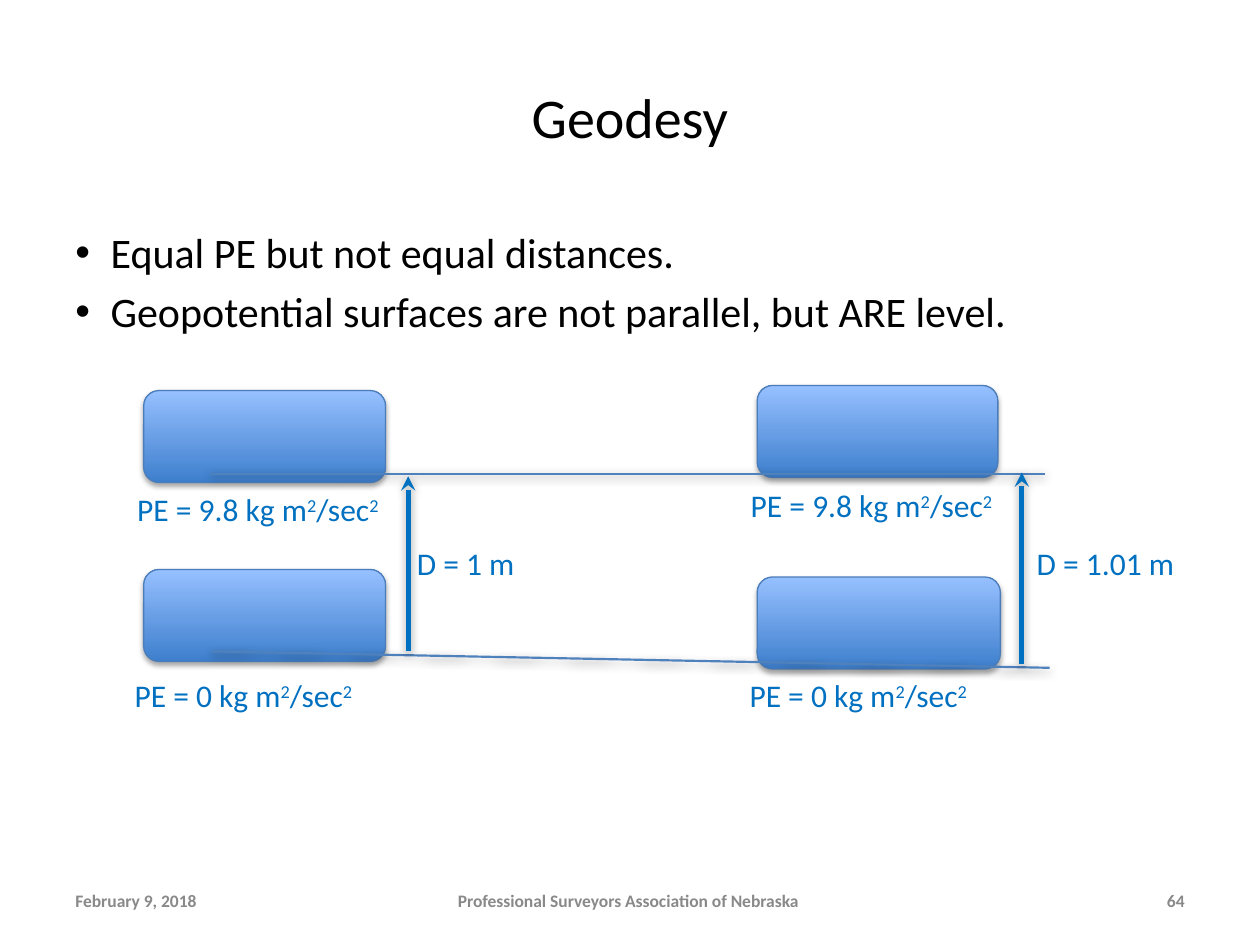
from typing import NamedTuple

from lxml import etree
from pptx import Presentation
from pptx.dml.color import RGBColor
from pptx.enum.shapes import MSO_CONNECTOR, MSO_SHAPE
from pptx.enum.text import MSO_ANCHOR, PP_ALIGN
from pptx.oxml.ns import qn
from pptx.util import Inches, Pt

LEFT, CENTER, RIGHT = PP_ALIGN.LEFT, PP_ALIGN.CENTER, PP_ALIGN.RIGHT
TOP, MIDDLE = MSO_ANCHOR.TOP, MSO_ANCHOR.MIDDLE
ROUNDED = MSO_SHAPE.ROUNDED_RECTANGLE
STRAIGHT = MSO_CONNECTOR.STRAIGHT
FONT = "Calibri"
COLORS = {
    "text": "000000",
    "footer": "898989",
    "label": "0070C0",
    "surface": "4F81BD",
    "block_edge": "4A7DBA",
    "block_bottom": "3E7FCD",
    "block_top": "96C0FF",
}


class Area(NamedTuple):
    left: float
    top: float
    width: float
    height: float


class Style(NamedTuple):
    size: float
    color: str
    bold: bool = False


class Footer(NamedTuple):
    text: str
    left: float
    width: float
    align: PP_ALIGN


class Label(NamedTuple):
    """Text in which each ^ puts the next character in superscript."""
    text: str
    left: float
    top: float
    width: float


class Line(NamedTuple):
    x1: float
    y1: float
    x2: float
    y2: float


TITLE_STYLE = Style(32, "text")
BODY_STYLE = Style(24, "text")
FOOTER_STYLE = Style(10, "footer", True)
LABEL_STYLE = Style(18, "label")

BULLETS = [
    "Equal PE but not equal distances.",
    "Geopotential surfaces are not parallel, but ARE level.",
]
FOOTERS = [
    Footer("February 9, 2018", 0.5, 2.33, LEFT),
    Footer("Professional Surveyors Association of Nebraska", 3.4, 3.17, CENTER),
    Footer("64", 7.17, 2.33, RIGHT),
]
BLOCKS = [
    Area(1.14, 4.52, 1.92, 0.73),
    Area(1.14, 3.1, 1.92, 0.73),
    Area(6.01, 4.58, 1.93, 0.73),
    Area(6.01, 3.06, 1.91, 0.73),
]
SURFACES = [Line(1.68, 5.17, 8.33, 5.3), Line(1.67, 3.76, 8.29, 3.76)]
HEIGHT_ARROWS = [Line(3.24, 5.17, 3.24, 3.78), Line(8.11, 5.27, 8.11, 3.75)]
UPPER_ENERGY = "PE = 9.8 kg m^2/sec^2"
LOWER_ENERGY = "PE = 0 kg m^2/sec^2"
LABELS = [
    Label(UPPER_ENERGY, 0.99, 3.84, 2.28),
    Label(UPPER_ENERGY, 5.86, 3.81, 2.28),
    Label(LOWER_ENERGY, 0.97, 5.32, 2.28),
    Label(LOWER_ENERGY, 5.85, 5.32, 2.28),
    Label("D = 1 m", 3.21, 4.27, 1.05),
    Label("D = 1.01 m", 8.13, 4.27, 1.37),
]


def rgb(name: str) -> RGBColor:
    return RGBColor.from_string(COLORS[name])


def add_span(para, text: str, style: Style, raised: bool = False) -> None:
    span = para.add_run()
    span.text = text
    span.font.name = FONT
    span.font.size = Pt(style.size)
    span.font.bold = style.bold
    span.font.color.rgb = rgb(style.color)
    if raised:
        span._r.get_or_add_rPr().set("baseline", "30000")


def add_text_box(slide, area: Area, anchor: MSO_ANCHOR = TOP):
    box = slide.shapes.add_textbox(*map(Inches, area))
    box.text_frame.word_wrap = True
    box.text_frame.vertical_anchor = anchor
    return box.text_frame


def add_shadow(shape, alpha: int, blur: float, distance: float) -> None:
    """Add a black shadow falling straight down; call after the line is set."""
    effects = etree.SubElement(shape._element.spPr, qn("a:effectLst"))
    shadow = etree.SubElement(
        effects, qn("a:outerShdw"), blurRad=str(Pt(blur)), dist=str(Pt(distance)),
        dir="5400000", rotWithShape="0")
    color = etree.SubElement(shadow, qn("a:srgbClr"), val="000000")
    etree.SubElement(color, qn("a:alpha"), val=str(alpha * 1000))


def add_title(slide, text: str) -> None:
    title = slide.shapes.title
    title.left, title.top, title.width, title.height = map(Inches, (0.5, 0.3, 9, 1.25))
    title.text_frame.vertical_anchor = MIDDLE
    para = title.text_frame.paragraphs[0]
    para.alignment = CENTER
    add_span(para, text, TITLE_STYLE)


def add_bullets(slide) -> None:
    frame = add_text_box(slide, Area(0.5, 1.75, 9, 0.78))
    for index, text in enumerate(BULLETS):
        para = frame.add_paragraph() if index else frame.paragraphs[0]
        if index:
            para.space_before = Pt(4.8)
        properties = para._p.get_or_add_pPr()
        properties.set("marL", str(Inches(0.28)))
        properties.set("indent", str(-Inches(0.28)))
        etree.SubElement(properties, qn("a:buFont"), typeface="Arial")
        etree.SubElement(properties, qn("a:buChar"), char="•")
        add_span(para, text, BODY_STYLE)


def add_footer(slide, footer: Footer) -> None:
    frame = add_text_box(slide, Area(footer.left, 6.95, footer.width, 0.4), MIDDLE)
    para = frame.paragraphs[0]
    para.alignment = footer.align
    add_span(para, footer.text, FOOTER_STYLE)


def add_block(slide, area: Area) -> None:
    block = slide.shapes.add_shape(ROUNDED, *map(Inches, area))
    block.adjustments[0] = 0.167
    block.fill.gradient()
    block.fill.gradient_angle = 90
    stops = zip(block.fill.gradient_stops, (0, 1), ("block_bottom", "block_top"))
    for stop, position, color in stops:
        stop.position = position
        stop.color.rgb = rgb(color)
    block.line.color.rgb = rgb("block_edge")
    block.line.width = Pt(0.75)
    add_shadow(block, 35, 3.1, 1.8)


def add_line(slide, line: Line, color: str, width: float, arrow: bool = False) -> None:
    connector = slide.shapes.add_connector(STRAIGHT, *map(Inches, line))
    connector.line.color.rgb = rgb(color)
    connector.line.width = Pt(width)
    if arrow:
        outline = connector.line._get_or_add_ln()
        etree.SubElement(outline, qn("a:tailEnd"), type="stealth")
    add_shadow(connector, 38, 5, 1.6)


def add_label(slide, label: Label) -> None:
    frame = add_text_box(slide, Area(label.left, label.top, label.width, 0.4))
    para = frame.paragraphs[0]
    start, *parts = label.text.split("^")
    add_span(para, start, LABEL_STYLE)
    for part in parts:
        add_span(para, part[0], LABEL_STYLE, raised=True)
        if part[1:]:
            add_span(para, part[1:], LABEL_STYLE)


def main() -> None:
    deck = Presentation()
    deck.slide_width, deck.slide_height = Inches(10), Inches(7.5)
    slide = deck.slides.add_slide(deck.slide_layouts[5])
    add_title(slide, "Geodesy")
    add_bullets(slide)
    for footer in FOOTERS:
        add_footer(slide, footer)
    for block in BLOCKS:
        add_block(slide, block)
    for surface in SURFACES:
        add_line(slide, surface, "surface", 1.25)
    for height in HEIGHT_ARROWS:
        add_line(slide, height, "label", 2.75, arrow=True)
    for label in LABELS:
        add_label(slide, label)
    deck.save("out.pptx")


if __name__ == "__main__":
    main()
